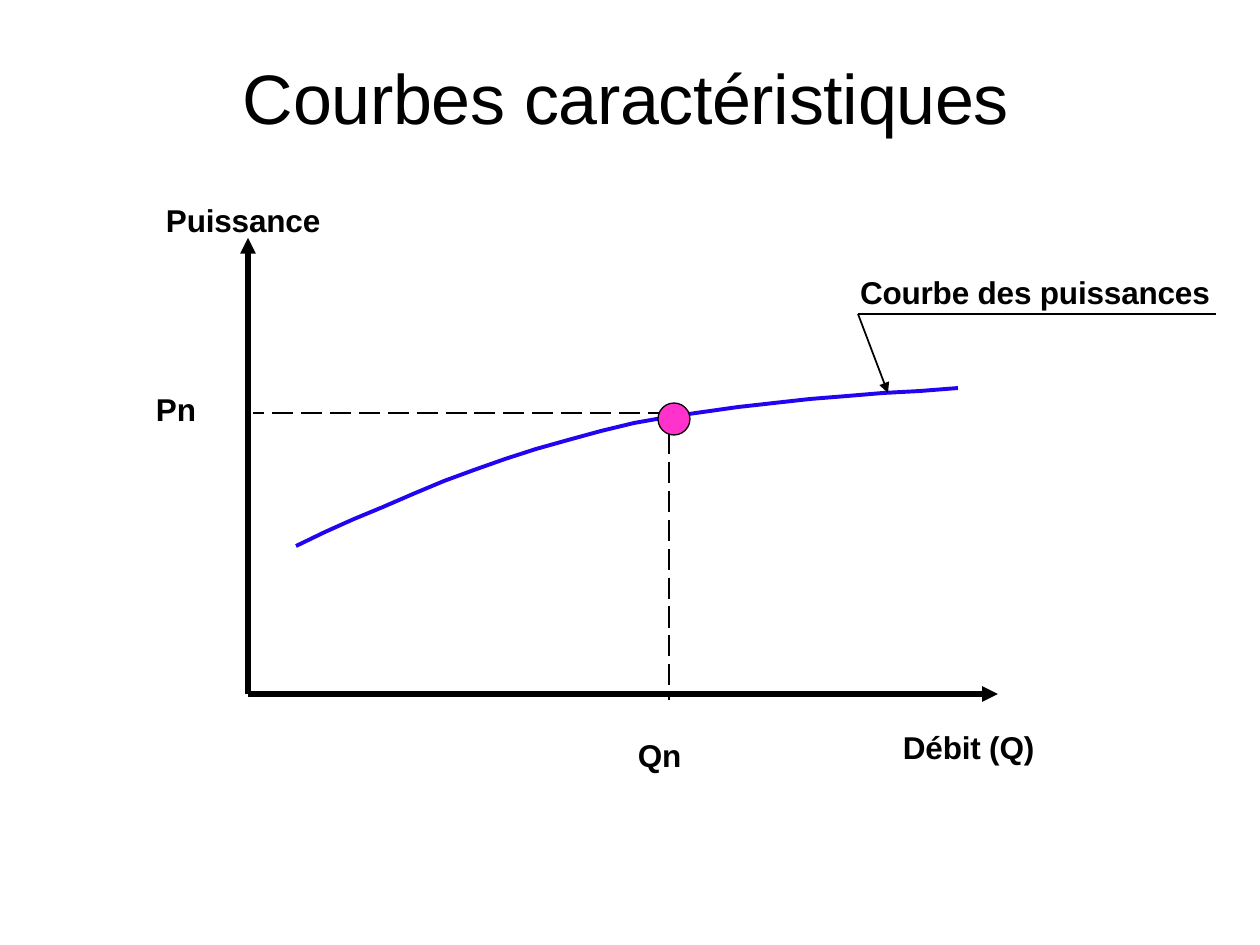
from collections import namedtuple
from dataclasses import dataclass

from lxml.etree import SubElement
from pptx import Presentation
from pptx.dml.color import RGBColor as Color
from pptx.enum.dml import MSO_LINE as Dash
from pptx.enum.shapes import MSO_CONNECTOR as Connector, MSO_SHAPE as Shape
from pptx.enum.text import MSO_ANCHOR as Anchor, PP_ALIGN as Align
from pptx.oxml.ns import qn
from pptx.util import Emu, Pt

PX = 914400 / 126
Box = namedtuple("Box", "left top width height")


@dataclass(frozen=True)
class Theme:
    """Colours, font and sizes of the slide."""
    ink: Color = Color(0, 0, 0)
    curve: Color = Color(0x21, 0x05, 0xF0)
    point: Color = Color(0xFF, 0x32, 0xCC)
    font: str = "Arial"
    title: int = 40
    label: int = 18
    axis_line: float = 3
    curve_line: float = 2.25
    dash_line: float = 1.5
    leader_line: float = 1
    thin_line: float = 0.75


THEME = Theme()
CURVE = [(48, 308), (77, 294), (106, 281), (135, 269), (165, 256), (196, 243),
         (226, 232), (257, 221), (288, 211), (320, 202), (353, 193),
         (386, 185), (420, 179), (455, 174), (490, 169), (526, 165),
         (562, 161), (599, 158), (635, 155), (672, 153), (710, 150)]


def px(length):
    """Turn px into EMU."""
    return Emu(round(length * PX))


def add_text(page, text, box, size=THEME.label, bold=True, spacing=-10):
    """Add a line of text without margins."""
    shape = page.shapes.add_textbox(*map(px, box))
    frame = shape.text_frame
    frame.word_wrap = True
    frame.vertical_anchor = Anchor.TOP
    frame.margin_left = frame.margin_top = 0
    frame.margin_right = frame.margin_bottom = 0
    para = frame.paragraphs[0]
    para.alignment = Align.LEFT
    span = para.add_run()
    span.text = text
    span.font.name = THEME.font
    span.font.size = Pt(size)
    span.font.bold = bold
    span.font.color.rgb = THEME.ink
    span.font._element.set("spc", str(spacing))


def add_line(page, box, start, end, width, dash=None, arrow=False):
    """Add a straight line between two points of the box."""
    ends = [px(box[axis] + point[axis]) for point in (start, end) for axis in (0, 1)]
    line = page.shapes.add_connector(Connector.STRAIGHT, *ends)
    line.line.color.rgb = THEME.ink
    line.line.width = Pt(width)
    if dash:
        line.line.dash_style = dash
    if arrow:
        SubElement(line.line._get_or_add_ln(), qn("a:tailEnd"), type="triangle")
    SubElement(line._element.spPr, qn("a:effectLst"))


def add_title(page, box):
    """Place the slide title."""
    add_text(page, "Courbes caractéristiques", box, THEME.title, False, -20)


def add_curve(page, box):
    """Draw the power curve."""
    builder = page.shapes.build_freeform(*CURVE[0], scale=PX)
    builder.add_line_segments(CURVE[1:], close=False)
    curve = builder.convert_to_shape(px(box.left), px(box.top))
    curve.shadow.inherit = False
    curve.fill.background()
    curve.line.color.rgb = THEME.curve
    curve.line.width = Pt(THEME.curve_line)


def add_point(page, box):
    """Draw the nominal operating point."""
    point = page.shapes.add_shape(Shape.OVAL, *map(px, box))
    point.shadow.inherit = False
    point.fill.solid()
    point.fill.fore_color.rgb = THEME.point
    point.line.color.rgb = THEME.ink
    point.line.width = Pt(THEME.thin_line)


def add_graph(page, box):
    """Draw axes, curve, nominal point and their labels."""
    origin = (0, box.height)
    for tip in ((0, 0), (box.width, box.height)):
        add_line(page, box, origin, tip, THEME.axis_line, arrow=True)
    add_curve(page, box)
    nominal_x, nominal_y = 421, 175
    for start, end in (((nominal_x, 195), (nominal_x, box.height + 6)),
                       ((nominal_x, nominal_y), (5, nominal_y))):
        add_line(page, box, start, end, THEME.dash_line, Dash.LONG_DASH)
    add_point(page, Box(box.left + 410, box.top + 165, 32, 32))
    for text, left, top, width in (("Puissance", -82, -37, 170),
                                   ("Débit (Q)", 655, 490, 150),
                                   ("Qn", 390, 498, 60),
                                   ("Pn", -92, 152, 60)):
        add_text(page, text, Box(box.left + left, box.top + top, width, 35))


def add_callout(page, box):
    """Name the curve with an underlined label and an arrow."""
    add_text(page, "Courbe des puissances",
             Box(box.left + 2, box.top, box.width + 12, 35))
    rule = 41
    add_line(page, box, (box.width, rule), (0, rule), THEME.thin_line)
    add_line(page, box, (0, rule), (30, box.height), THEME.leader_line, arrow=True)


def main():
    """Build and save the slide."""
    deck = Presentation()
    deck.slide_width, deck.slide_height = px(1260), px(945)
    page = deck.slides.add_slide(deck.slide_layouts[6])
    add_title(page, Box(243, 54, 895, 117))
    add_graph(page, Box(248, 238, 750, 456))
    add_callout(page, Box(858, 273, 358, 120))
    deck.save("out.pptx")


if __name__ == "__main__":
    main()
